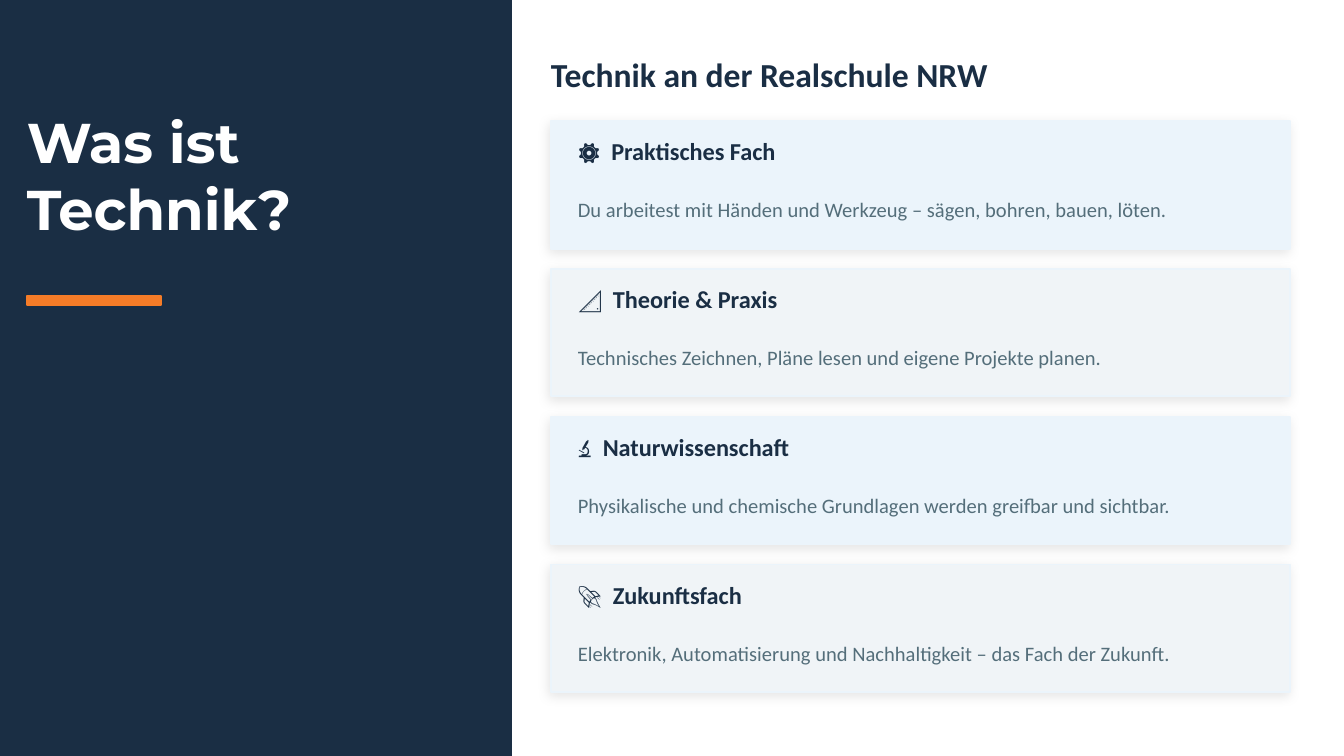
from dataclasses import dataclass

from lxml import etree
from pptx import Presentation
from pptx.dml.color import RGBColor
from pptx.enum.shapes import MSO_SHAPE
from pptx.enum.text import MSO_ANCHOR, MSO_AUTO_SIZE, PP_ALIGN
from pptx.oxml.ns import qn
from pptx.util import Emu, Pt

RECTANGLE = MSO_SHAPE.RECTANGLE
MIDDLE = MSO_ANCHOR.MIDDLE
LEFT = PP_ALIGN.LEFT
NO_AUTOFIT = MSO_AUTO_SIZE.NONE

EMU_PER_PX = 4572  # 200 px to the inch
SLIDE_W, SLIDE_H = 2000, 1125
CARD_X, CARD_Y, CARD_W, CARD_H = 820, 180, 1100, 190
CARD_PITCH = 220
CARD_PADDING = 40

COLORS = {
    "navy": "1A2E44",
    "orange": "F57C28",
    "white": "FFFFFF",
    "pale_blue": "EBF4FB",
    "pale_gray": "F0F4F7",
    "slate": "546E7A",
    "shadow": "000000",
}


@dataclass(frozen=True)
class Box:
    x: int
    y: int
    w: int
    h: int

    def emu(self) -> list[Emu]:
        return [Emu(px * EMU_PER_PX) for px in (self.x, self.y, self.w, self.h)]


@dataclass(frozen=True)
class TextStyle:
    font: str
    size: int
    color: str
    bold: bool = False


@dataclass(frozen=True)
class Topic:
    icon: str
    heading: str
    description: str


TITLE_STYLE = TextStyle("Montserrat", 30, "white", True)
SECTION_STYLE = TextStyle("Calibri", 18, "navy", True)
HEADING_STYLE = TextStyle("Calibri", 13, "navy", True)
DESCRIPTION_STYLE = TextStyle("Calibri", 11, "slate")

TOPICS = [
    Topic("⚙️", "Praktisches Fach",
          "Du arbeitest mit Händen und Werkzeug – sägen, bohren, bauen, löten."),
    Topic("📐", "Theorie & Praxis",
          "Technisches Zeichnen, Pläne lesen und eigene Projekte planen."),
    Topic("🔬", "Naturwissenschaft",
          "Physikalische und chemische Grundlagen werden greifbar und sichtbar."),
    Topic("🚀", "Zukunftsfach",
          "Elektronik, Automatisierung und Nachhaltigkeit – das Fach der Zukunft."),
]


def rgb(name: str) -> RGBColor:
    return RGBColor.from_string(COLORS[name])


def add_rectangle(slide, box: Box, fill: str, outline: str):
    rectangle = slide.shapes.add_shape(RECTANGLE, *box.emu())
    rectangle.shadow.inherit = False
    rectangle.fill.solid()
    rectangle.fill.fore_color.rgb = rgb(fill)
    rectangle.line.color.rgb = rgb(outline)
    rectangle.line.width = Pt(1)
    return rectangle


def add_soft_shadow(shape) -> None:
    """Give the shape a 10 % shadow, 6 pt blurred, 2 pt to the lower left."""
    effects = shape._element.spPr.find(qn("a:effectLst"))
    shadow = etree.SubElement(
        effects, qn("a:outerShdw"), blurRad=str(Pt(6)), dist=str(Pt(2)),
        dir=str(135 * 60000), algn="bl", rotWithShape="0")
    color = etree.SubElement(shadow, qn("a:srgbClr"), val=COLORS["shadow"])
    etree.SubElement(color, qn("a:alpha"), val="10000")


def format_text(frame, style: TextStyle) -> None:
    frame.word_wrap = True
    frame.auto_size = NO_AUTOFIT
    frame.vertical_anchor = MIDDLE
    frame.margin_left = frame.margin_right = 0
    frame.margin_top = frame.margin_bottom = 0
    for paragraph in frame.paragraphs:
        paragraph.alignment = LEFT
        for run in paragraph.runs:
            run.font.name = style.font
            run.font.size = Pt(style.size)
            run.font.bold = style.bold
            run.font.color.rgb = rgb(style.color)


def add_text(slide, box: Box, text: str, style: TextStyle) -> None:
    frame = slide.shapes.add_textbox(*box.emu()).text_frame
    frame.text = text
    format_text(frame, style)


def add_icon_heading(slide, box: Box, topic: Topic) -> None:
    """Write icon and heading, with the space between them widened by 3 pt."""
    frame = slide.shapes.add_textbox(*box.emu()).text_frame
    icon, gap, heading = (frame.paragraphs[0].add_run() for _ in range(3))
    icon.text, gap.text, heading.text = topic.icon, " ", topic.heading
    format_text(frame, HEADING_STYLE)
    gap.font._element.set("spc", "300")


def add_card(slide, topic: Topic, index: int) -> None:
    top = CARD_Y + index * CARD_PITCH
    fill = "pale_gray" if index % 2 else "pale_blue"
    card = add_rectangle(slide, Box(CARD_X, top, CARD_W, CARD_H), fill, "pale_blue")
    add_soft_shadow(card)
    text_x = CARD_X + CARD_PADDING
    text_w = CARD_W - 2 * CARD_PADDING
    add_icon_heading(slide, Box(text_x, top + 10, text_w, 70), topic)
    add_text(slide, Box(text_x, top + 84, text_w, 96),
             topic.description, DESCRIPTION_STYLE)


def add_title(slide, box: Box, text: str) -> None:
    title = slide.shapes.title
    title.left, title.top, title.width, title.height = box.emu()
    title.text_frame.text = text
    format_text(title.text_frame, TITLE_STYLE)
    # Bring the title in front of the panel.
    slide.shapes._spTree.append(title._element)


def main() -> None:
    presentation = Presentation()
    presentation.slide_width = Emu(SLIDE_W * EMU_PER_PX)
    presentation.slide_height = Emu(SLIDE_H * EMU_PER_PX)
    slide = presentation.slides.add_slide(presentation.slide_layouts[5])
    slide.background.fill.solid()
    slide.background.fill.fore_color.rgb = rgb("white")

    add_rectangle(slide, Box(0, 0, 760, SLIDE_H), "navy", "navy")
    add_title(slide, Box(40, 100, 680, 320), "Was ist\nTechnik?")
    add_rectangle(slide, Box(40, 440, 200, 14), "orange", "orange")

    add_text(slide, Box(CARD_X, 60, CARD_W, 100),
             "Technik an der Realschule NRW", SECTION_STYLE)
    for index, topic in enumerate(TOPICS):
        add_card(slide, topic, index)

    presentation.save("out.pptx")


if __name__ == "__main__":
    main()
